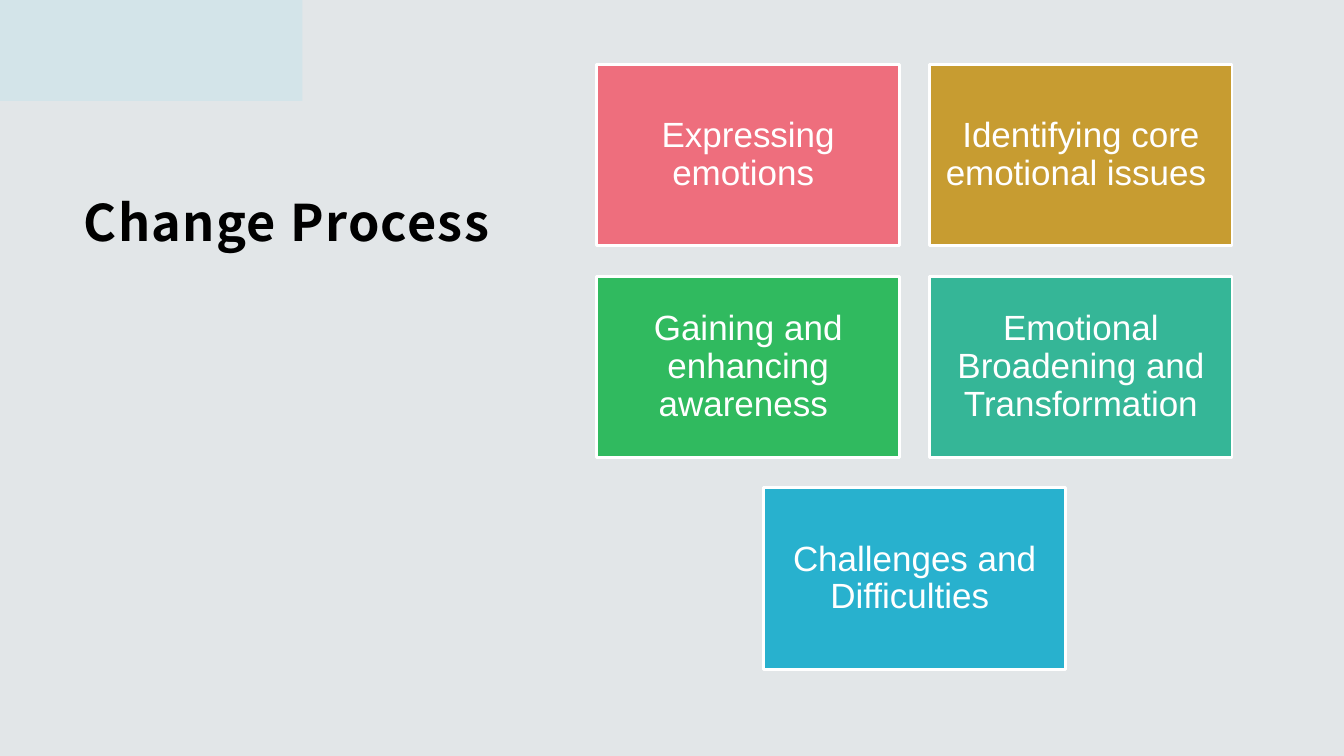
from lxml.etree import SubElement
from pptx import Presentation
from pptx.dml.color import RGBColor
from pptx.enum.shapes import MSO_SHAPE as Shape
from pptx.enum.text import MSO_ANCHOR as Anchor, PP_ALIGN as Align
from pptx.oxml.ns import qn
from pptx.util import Inches, Pt

BACKGROUND, WHITE, BLACK = "E2E6E8", "FFFFFF", "000000"
STEPS = [
    ("Expressing emotions ", "EE6E7D"),
    ("Identifying core emotional issues ", "C79C31"),
    ("Gaining and enhancing awareness ", "30BA5F"),
    ("Emotional Broadening and Transformation", "35B697"),
    ("Challenges and Difficulties ", "28B1CE"),
]
CARD_WIDTH, CARD_HEIGHT, GAP = 3, 1.8, 0.3
GRID_LEFT, GRID_TOP, COLUMNS = 5.92, 0.64, 2
# Cubic segments along the lower edge of the corner wave, right to left
WAVE_START = (4.32, 0.01)
WAVE_CURVES = [
    ((3.77, 0.32), (3.2, 0.63), (2.68, 0.92)),
    ((2.32, 1.12), (1.95, 1.25), (1.58, 1.32)),
    ((1.3, 1.37), (1.02, 1.4), (0.74, 1.39)),
    ((0.53, 1.39), (0.31, 1.37), (0.1, 1.35)),
]


def color(hex_string):
    return RGBColor.from_string(hex_string)


def curve_points(start, curves, steps=16):
    """Sample a chain of cubic Bezier curves."""
    points = [start]
    for first, second, end in curves:
        for step in range(1, steps + 1):
            t = step / steps
            points.append(tuple(
                (1 - t) ** 3 * a + 3 * (1 - t) ** 2 * t * b
                + 3 * (1 - t) * t ** 2 * c + t ** 3 * d
                for a, b, c, d in zip(start, first, second, end)))
        start = end
    return points


def write_text(shape, text, *, size, font, fill, bold=False, align=Align.LEFT,
               anchor=Anchor.TOP, line_spacing=1.0, inset=0.1, tracking=0):
    frame = shape.text_frame
    frame.word_wrap = True
    frame.vertical_anchor = anchor
    frame.margin_left = frame.margin_right = Inches(inset)
    frame.margin_top = frame.margin_bottom = Inches(inset)
    paragraph = frame.paragraphs[0]
    paragraph.alignment = align
    paragraph.line_spacing = line_spacing
    run = paragraph.add_run()
    run.text = text
    run.font.size = Pt(size)
    run.font.name = font
    run.font.bold = bold
    run.font.color.rgb = color(fill)
    properties = run.font._element
    SubElement(properties, qn("a:ea")).set("typeface", font)
    if tracking:
        properties.set("spc", str(tracking * 100))


class SlideBuilder:
    title_font = "Noto Sans CJK JP"
    body_font = "Arial"

    def __init__(self, presentation):
        self.slide = presentation.slides.add_slide(presentation.slide_layouts[6])
        background = self.slide.background.fill
        background.solid()
        background.fore_color.rgb = color(BACKGROUND)

    def wave(self, points, fill, opacity):
        builder = self.slide.shapes.build_freeform(*points[0], scale=Inches(1))
        builder.add_line_segments(points[1:], close=True)
        shape = builder.convert_to_shape()
        shape.shadow.inherit = False
        shape.fill.solid()
        shape.fill.fore_color.rgb = color(fill)
        shape.line.fill.background()
        solid = shape._element.spPr.find(qn("a:solidFill"))
        SubElement(solid[0], qn("a:alpha")).set("val", str(opacity * 1000))

    def title(self, text, left, top, width, height):
        box = self.slide.shapes.add_textbox(*map(Inches, (left, top, width, height)))
        write_text(box, text, size=36, font=self.title_font, fill=BLACK, bold=True,
                   line_spacing=1.17, inset=0.12, tracking=1)

    def card(self, text, fill, left, top):
        shape = self.slide.shapes.add_shape(
            Shape.RECTANGLE, *map(Inches, (left, top, CARD_WIDTH, CARD_HEIGHT)))
        shape.shadow.inherit = False
        shape.fill.solid()
        shape.fill.fore_color.rgb = color(fill)
        shape.line.color.rgb = color(WHITE)
        shape.line.width = Pt(2)
        write_text(shape, text, size=25, font=self.body_font, fill=WHITE,
                   align=Align.CENTER, anchor=Anchor.MIDDLE, line_spacing=0.9)

    def card_grid(self, steps):
        """Lay cards out in rows, centring a row that is not full."""
        for index, (text, fill) in enumerate(steps):
            row, column = divmod(index, COLUMNS)
            missing = COLUMNS - min(COLUMNS, len(steps) - row * COLUMNS)
            left = GRID_LEFT + (column + missing / 2) * (CARD_WIDTH + GAP)
            top = GRID_TOP + row * (CARD_HEIGHT + GAP)
            self.card(text, fill, left, top)


def main():
    presentation = Presentation()
    presentation.slide_width = Inches(13.33)
    presentation.slide_height = Inches(7.5)
    builder = SlideBuilder(presentation)
    builder.title("Change Process", 0.71, 1.67, 4.84, 4.97)
    edge = curve_points(WAVE_START, WAVE_CURVES)
    builder.wave([(0, 0), (4.35, 0), *edge, (0, 1.33)], "A7E1EE", 25)
    builder.card_grid(STEPS)
    presentation.save("out.pptx")


if __name__ == "__main__":
    main()
